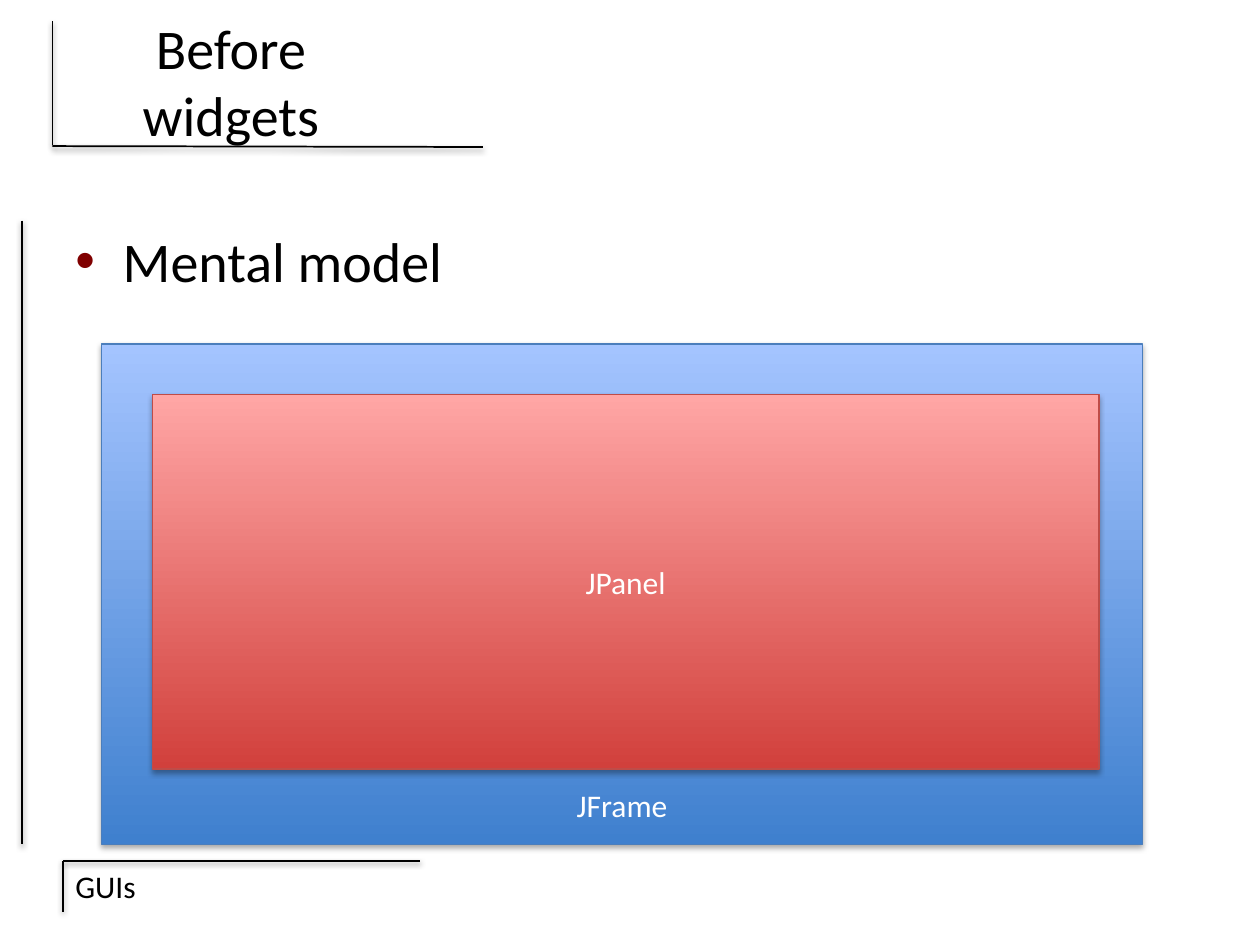
from lxml import etree
from pptx import Presentation
from pptx.dml.color import RGBColor
from pptx.enum import shapes, text
from pptx.oxml import ns
from pptx.util import Pt

BLACK = RGBColor(0, 0, 0)
WHITE = RGBColor(255, 255, 255)
MAROON = RGBColor(0x80, 0, 0)
BLUES = [RGBColor(0x3F, 0x80, 0xCE), RGBColor(0xA4, 0xC4, 0xFF)]
REDS = [RGBColor(0xD1, 0x40, 0x3C), RGBColor(0xFF, 0xA6, 0xA5)]
NAVY = RGBColor(0x4B, 0x7E, 0xBC)
BRICK = RGBColor(0xBF, 0x4C, 0x48)
FONT = "Calibri"
MID, LOW = text.MSO_ANCHOR.MIDDLE, text.MSO_ANCHOR.BOTTOM
MIDDLE = text.PP_ALIGN.CENTER

RULES = [
    (240, 492, 36, 492),
    (12.5, 126, 12.5, 482.5),
    (36, 492, 36, 521),
    (276, 84, 30, 83.5),
    (30, 12, 30, 83),
]
LABELS = [
    ("GUIs", (36, 492, 174, 29), dict(size=18)),
    ("Before widgets", (36, 12, 192, 68.5), dict(size=32, align=MIDDLE, anchor=MID)),
    ("Mental model", (36, 126, 648, 356.5), dict(size=32, bullet="•")),
]
PANELS = [
    ("JFrame", (58, 196.5, 595, 286), BLUES, NAVY, dict(anchor=LOW, base=12)),
    ("JPanel", (87, 225.5, 541, 214), REDS, BRICK, dict(anchor=MID)),
]


def child(node, tag, **attrs):
    return etree.SubElement(node, ns.qn(tag), attrs)


def shade(shape, alpha, dist):
    props = shape._element.spPr
    for old in props.findall(ns.qn("a:effectLst")):
        props.remove(old)
    drop = child(child(props, "a:effectLst"), "a:outerShdw",
                 blurRad=str(Pt(3.1)), dist=str(Pt(dist)),
                 dir="5400000", rotWithShape="0")
    tint = child(drop, "a:srgbClr", val=str(BLACK))
    child(tint, "a:alpha", val=str(alpha * 1000))


def write(shape, words, size=18, color=BLACK, align=text.PP_ALIGN.LEFT,
          anchor=text.MSO_ANCHOR.TOP, base=3.6, bullet=None):
    frame = shape.text_frame
    frame.word_wrap = True
    frame.vertical_anchor = anchor
    frame.margin_bottom = Pt(base)
    para = frame.paragraphs[0]
    para.alignment = align
    run = para.add_run()
    run.text = words
    run.font.name = FONT
    run.font.size = Pt(size)
    run.font.color.rgb = color
    if bullet:
        props = para._p.get_or_add_pPr()
        props.set("marL", str(Pt(27)))
        props.set("indent", str(Pt(-27)))
        child(child(props, "a:buClr"), "a:srgbClr", val=str(MAROON))
        child(props, "a:buFont", typeface="Arial")
        child(props, "a:buChar", char=bullet)


def main():
    deck = Presentation()
    deck.slide_width, deck.slide_height = Pt(720), Pt(540)
    slide = deck.slides.add_slide(deck.slide_layouts[6])
    items = slide.shapes

    for ends in RULES:
        rule = items.add_connector(shapes.MSO_CONNECTOR.STRAIGHT, *map(Pt, ends))
        rule.line.color.rgb = BLACK
        rule.line.width = Pt(1)
        shade(rule, 38, 1.6)

    for words, area, style in LABELS:
        write(items.add_textbox(*map(Pt, area)), words, **style)

    for words, area, stops, edge, style in PANELS:
        panel = items.add_shape(shapes.MSO_SHAPE.RECTANGLE, *map(Pt, area))
        panel.fill.gradient()
        panel.fill.gradient_angle = 90
        for stop, color in zip(panel.fill.gradient_stops, stops):
            stop.color.rgb = color
        panel.line.color.rgb = edge
        panel.line.width = Pt(0.75)
        shade(panel, 35, 1.8)
        write(panel, words, color=WHITE, align=MIDDLE, **style)

    deck.save("out.pptx")


if __name__ == "__main__":
    main()
